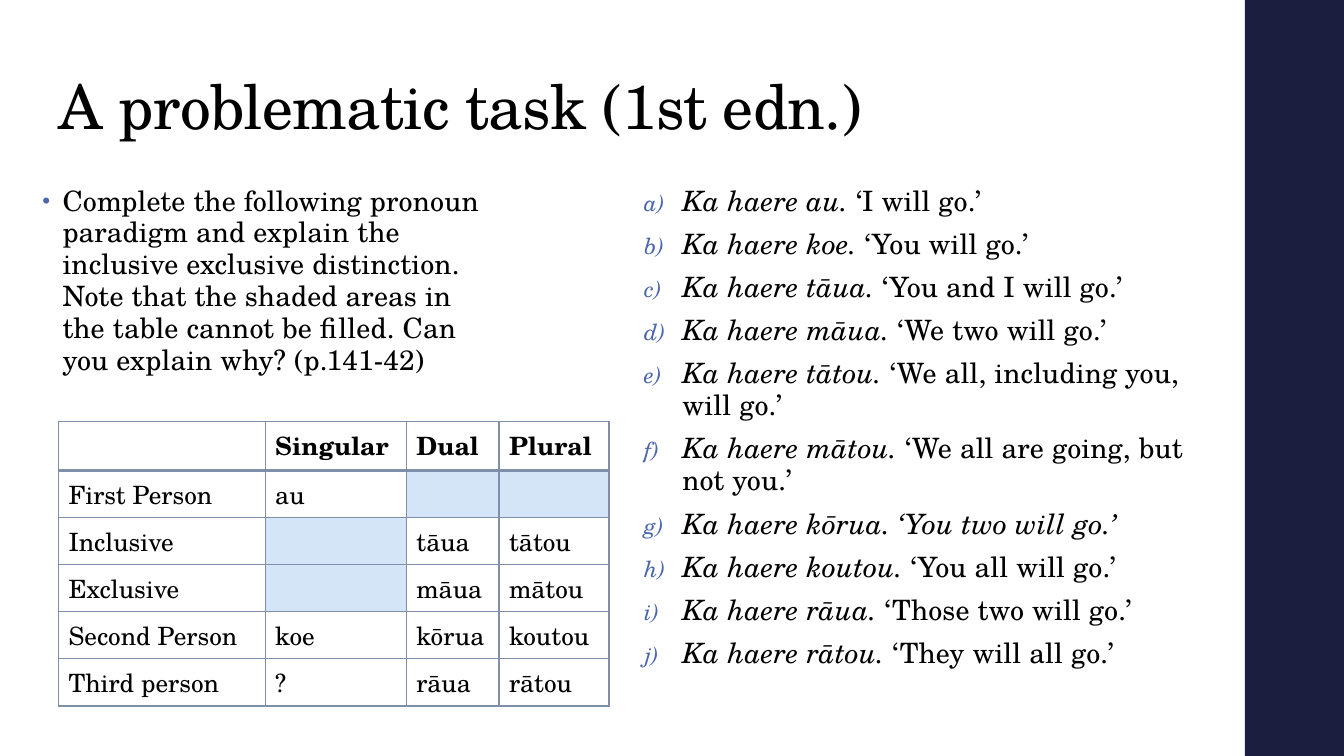
"""Build a slide with a pronoun paradigm table and its example sentences."""
from dataclasses import dataclass

from lxml.etree import SubElement
from pptx import Presentation
from pptx.dml.color import RGBColor
from pptx.enum.shapes import MSO_SHAPE as Preset
from pptx.enum.text import MSO_ANCHOR as Anchor, MSO_AUTO_SIZE as AutoSize, PP_ALIGN as Align
from pptx.oxml.ns import qn
from pptx.util import Inches, Pt


@dataclass(frozen=True)
class Theme:
    font: str = "TeX Gyre Schola"
    text: str = "000000"
    accent: str = "4A66AC"
    band: str = "1B1E3E"
    border: str = "7F8FA9"
    blank: str = "FFFFFF"
    shaded: str = "D4E5F7"
    title_size: int = 44
    body_size: int = 20
    table_size: int = 18


theme = Theme()


def add_run(paragraph, text, size, spacing=0, bold=False, italic=False):
    run = paragraph.add_run()
    run.text = text
    run.font.name = theme.font
    run.font.size = Pt(size)
    run.font.bold = bold
    run.font.italic = italic
    run.font.color.rgb = RGBColor.from_string(theme.text)
    run.font._element.set("spc", str(spacing))


def format_item(paragraph, indent, before, font, tag, **marker):
    paragraph.line_spacing = 0.95
    paragraph.space_before = Pt(before)
    paragraph.space_after = Pt(2)
    properties = paragraph._p.get_or_add_pPr()
    properties.set("marL", str(Inches(indent)))
    properties.set("indent", str(-Inches(indent)))
    colour = SubElement(properties, qn("a:buClr"))
    SubElement(colour, qn("a:srgbClr"), val=theme.accent)
    SubElement(properties, qn("a:buSzPct"), val="80000")
    SubElement(properties, qn("a:buFont"), typeface=font)
    SubElement(properties, qn(tag), **marker)


presentation = Presentation()
presentation.slide_width = Inches(13.33)
presentation.slide_height = Inches(7.5)
column = presentation.slide_width / 100
row = presentation.slide_height / 100
slide = presentation.slides.add_slide(presentation.slide_layouts[3])

band = slide.shapes.add_shape(
    Preset.RECTANGLE, int(92.63 * column), 0, int(7.37 * column), presentation.slide_height)
band.shadow.inherit = False
band.fill.solid()
band.fill.fore_color.rgb = RGBColor.from_string(theme.band)
band.line.fill.background()

title, task, examples = slide.placeholders
places = [
    (title, 3.6, 8.13, 79.5, 11.47, Anchor.BOTTOM),
    (task, 2.4, 23.87, 35.7, 34.93, Anchor.TOP),
    (examples, 47.18, 23.87, 44.1, 70.53, Anchor.TOP),
]
for shape, left, top, width, height, anchor in places:
    shape.left, shape.width = int(left * column), int(width * column)
    shape.top, shape.height = int(top * row), int(height * row)
    shape.text_frame.word_wrap = True
    shape.text_frame.auto_size = AutoSize.NONE
    shape.text_frame.vertical_anchor = anchor

heading = title.text_frame.paragraphs[0]
heading.alignment = Align.LEFT
heading.line_spacing = 0.9
add_run(heading, "A problematic task (1st edn.)", theme.title_size, -50)

question = task.text_frame.paragraphs[0]
format_item(question, 0.2, 14, "Arial", "a:buChar", char="•")
add_run(
    question,
    "Complete the following pronoun paradigm and explain the inclusive exclusive distinction. "
    "Note that the shaded areas in the table cannot be filled. Can you explain why? (p.141-42)",
    theme.body_size, 10)

sentences = [
    ("Ka haere au. ", "‘I will go.’"),
    ("Ka haere koe. ", "‘You will go.’"),
    ("Ka haere tāua. ", "‘You and I will go.’"),
    ("Ka haere māua. ", "‘We two will go.’"),
    ("Ka haere tātou. ", "‘We all, including you, will go.’"),
    ("Ka haere mātou. ", "‘We all are going, but not you.’"),
    ("Ka haere kōrua. ‘You two will go.’", ""),
    ("Ka haere koutou. ", "‘You all will go.’"),
    ("Ka haere rāua. ", "‘Those two will go.’"),
    ("Ka haere rātou. ", "‘They will all go.’"),
]
for index, (phrase, meaning) in enumerate(sentences):
    frame = examples.text_frame
    paragraph = frame.add_paragraph() if index else frame.paragraphs[0]
    format_item(paragraph, 0.38, 6, theme.font, "a:buAutoNum", type="alphaLcParenR")
    add_run(paragraph, phrase, theme.body_size, 10, italic=True)
    if meaning:
        add_run(paragraph, meaning, theme.body_size, 10)

paradigm = [
    ("", "Singular", "Dual", "Plural"),
    ("First Person", "au", "", ""),
    ("Inclusive", "", "tāua", "tātou"),
    ("Exclusive", "", "māua", "mātou"),
    ("Second Person", "koe", "kōrua", "koutou"),
    ("Third person", "?", "rāua", "rātou"),
]
widths = [15.38, 10.5, 6.9, 8.18]
table = slide.shapes.add_table(
    len(paradigm), len(widths), int(4.35 * column), int(55.73 * row),
    int(sum(widths) * column), int(len(paradigm) * 5.4 * row)).table
table.first_row = False
table.horz_banding = False
for table_column, width in zip(table.columns, widths):
    table_column.width = int(width * column)

for row_index, words in enumerate(paradigm):
    for column_index, word in enumerate(words):
        cell = table.cell(row_index, column_index)
        header = row_index == 0
        properties = cell._tc.get_or_add_tcPr()
        for side in ("L", "R", "T", "B"):
            thick = (header and side == "B") or (row_index == 1 and side == "T")
            line = SubElement(properties, qn(f"a:ln{side}"), w=str(Pt(2 if thick else 1)))
            fill = SubElement(line, qn("a:solidFill"))
            SubElement(fill, qn("a:srgbClr"), val=theme.border)
        cell.fill.solid()
        cell.fill.fore_color.rgb = RGBColor.from_string(
            theme.blank if word or header else theme.shaded)
        if word:
            add_run(cell.text_frame.paragraphs[0], word, theme.table_size, bold=header)

presentation.save("out.pptx")
